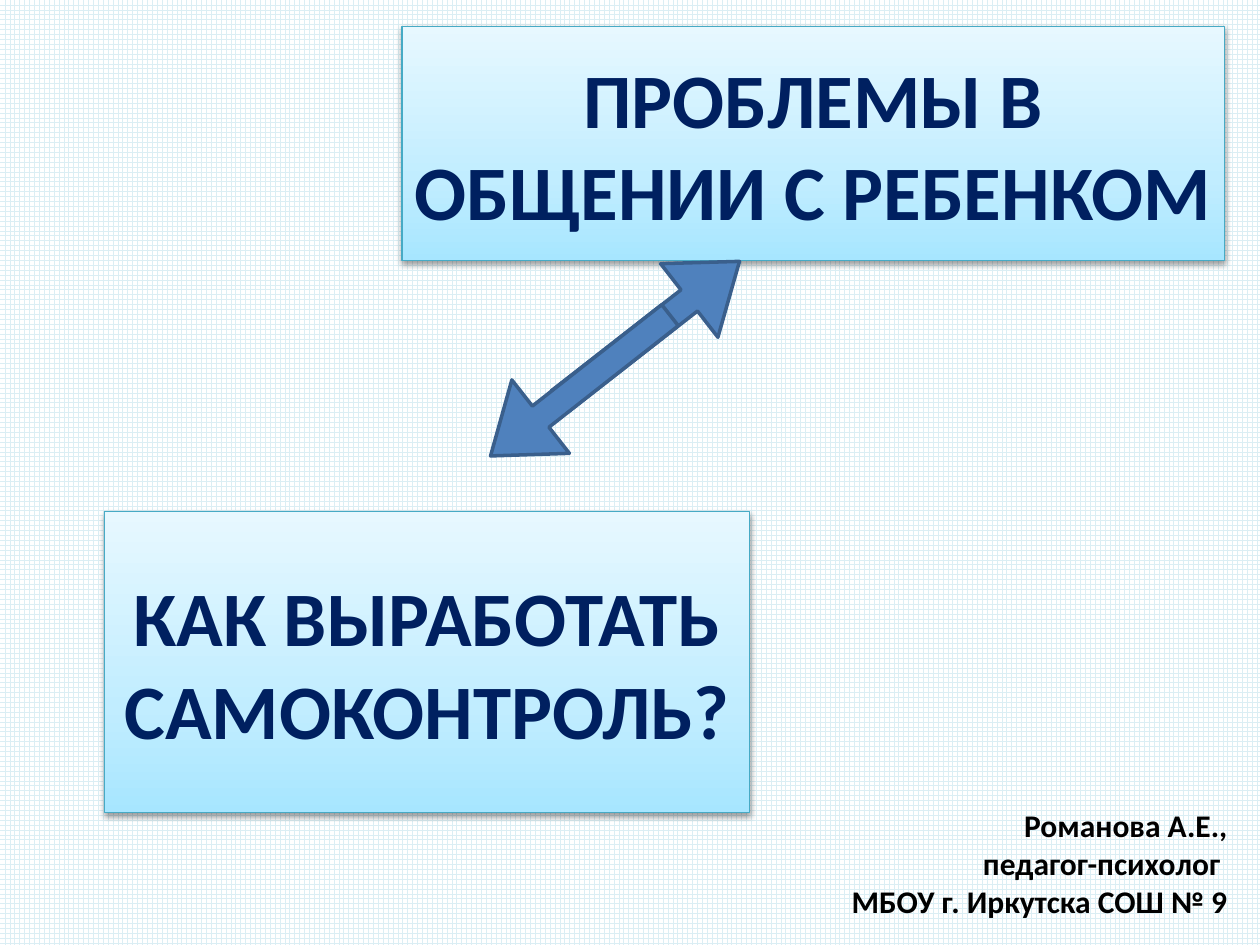
import copy

import pptx
import pptx.dml.color
import pptx.enum.dml
import pptx.enum.shapes
import pptx.enum.text
import pptx.oxml
import pptx.oxml.ns
import pptx.util
from pptx.util import Inches

FONT = "Calibri"
COLORS = {
    "grid": "DBEEF4",
    "paper": "FFFFFF",
    "box_bottom": "A7E6FF",
    "box_middle": "C1EDFF",
    "box_top": "E7F8FF",
    "box_line": "46AAC5",
    "heading": "002060",
    "arrow": "4F81BD",
    "arrow_line": "3A5F8C",
    "author": "000000",
}
BOX_STOPS = [(0, "box_bottom"), (0.35, "box_middle"), (1, "box_top")]
SHADOW = (
    f'<a:effectLst {pptx.oxml.ns.nsdecls("a")}>'
    '<a:outerShdw blurRad="40000" dist="20000" dir="5400000" rotWithShape="0">'
    '<a:srgbClr val="000000"><a:alpha val="38000"/></a:srgbClr>'
    "</a:outerShdw></a:effectLst>"
)


def rgb(name):
    return pptx.dml.color.RGBColor.from_string(COLORS[name])


def set_background(slide):
    fill = slide.background.fill
    fill.patterned()
    fill.pattern = pptx.enum.dml.MSO_PATTERN.LARGE_GRID
    fill.fore_color.rgb = rgb("grid")
    fill.back_color.rgb = rgb("paper")


def write_text(shape, lines, size, color, align, anchor):
    frame = shape.text_frame
    frame.word_wrap = True
    frame.vertical_anchor = anchor
    for index, line in enumerate(lines):
        paragraph = frame.paragraphs[0] if index == 0 else frame.add_paragraph()
        paragraph.alignment = align
        run = paragraph.add_run()
        run.text = line
        run.font.name = FONT
        run.font.size = pptx.util.Pt(size)
        run.font.bold = True
        run.font.color.rgb = rgb(color)


def set_line(shape, color, width):
    shape.line.color.rgb = rgb(color)
    shape.line.width = pptx.util.Pt(width)


def fill_gradient(shape, stops):
    """Fill from bottom to top with (position, color name) stops."""
    shape.fill.gradient()
    shape.fill.gradient_angle = 90
    stop_list = shape._element.spPr.find(".//" + pptx.oxml.ns.qn("a:gsLst"))
    while len(stop_list) < len(stops):
        stop_list.append(copy.deepcopy(stop_list[0]))
    for stop, (position, color) in zip(shape.fill.gradient_stops, stops):
        stop.position = position
        stop.color.rgb = rgb(color)


def add_heading_box(slide, text, left, top, width, height):
    box = slide.shapes.add_shape(
        pptx.enum.shapes.MSO_SHAPE.RECTANGLE,
        Inches(left), Inches(top), Inches(width), Inches(height))
    fill_gradient(box, BOX_STOPS)
    set_line(box, "box_line", 0.75)
    box._element.spPr.append(pptx.oxml.parse_xml(SHADOW))
    write_text(box, [text], size=44, color="heading",
               align=pptx.enum.text.PP_ALIGN.CENTER,
               anchor=pptx.enum.text.MSO_ANCHOR.MIDDLE)


def add_arrow(slide, left, top, rotation):
    arrow = slide.shapes.add_shape(
        pptx.enum.shapes.MSO_SHAPE.RIGHT_ARROW,
        Inches(left), Inches(top), Inches(1.81), Inches(0.74))
    arrow.adjustments[0] = 0.288
    arrow.adjustments[1] = 0.682
    arrow.rotation = rotation
    arrow.shadow.inherit = False
    arrow.fill.solid()
    arrow.fill.fore_color.rgb = rgb("arrow")
    set_line(arrow, "arrow_line", 2)


def add_author(slide, lines):
    box = slide.shapes.add_textbox(
        Inches(4.84), Inches(6.35), Inches(5), Inches(1.01))
    write_text(box, lines, size=18, color="author",
               align=pptx.enum.text.PP_ALIGN.RIGHT,
               anchor=pptx.enum.text.MSO_ANCHOR.TOP)
    box.text_frame.auto_size = pptx.enum.text.MSO_AUTO_SIZE.SHAPE_TO_FIT_TEXT


def main():
    presentation = pptx.Presentation()
    presentation.slide_width = Inches(10)
    presentation.slide_height = Inches(7.5)
    slide = presentation.slides.add_slide(presentation.slide_layouts[6])
    set_background(slide)
    add_heading_box(slide, "КАК ВЫРАБОТАТЬ САМОКОНТРОЛЬ?", 0.83, 4.06, 5.12, 2.39)
    add_heading_box(slide, "ПРОБЛЕМЫ В ОБЩЕНИИ С РЕБЕНКОМ", 3.19, 0.21, 6.53, 1.86)
    add_arrow(slide, 4.25, 2.26, rotation=322.1)
    add_arrow(slide, 3.7, 2.69, rotation=141.9)
    add_author(slide, ["Романова А.Е.,", " педагог-психолог ", "МБОУ г. Иркутска СОШ № 9"])
    presentation.save("out.pptx")


if __name__ == "__main__":
    main()
